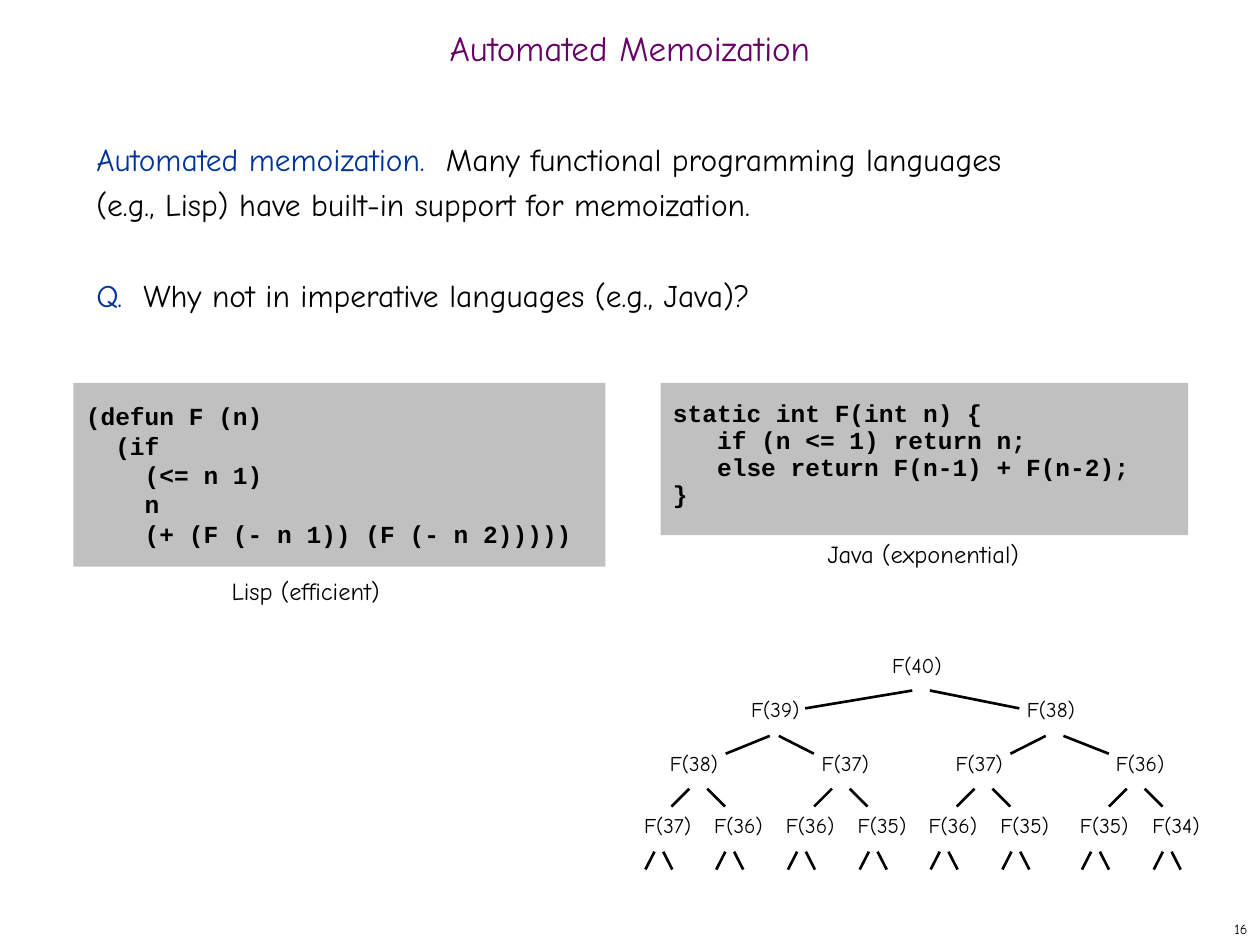
"""Build the Automated Memoization slide with two code boxes and a call tree."""
from lxml.etree import SubElement
from pptx import Presentation
from pptx.dml.color import RGBColor
from pptx.enum.shapes import MSO_CONNECTOR as CONN, MSO_SHAPE as SHAPE
from pptx.enum.text import MSO_ANCHOR as ANCHOR, PP_ALIGN as ALIGN
from pptx.oxml.ns import qn
from pptx.util import Pt

COLORS = {"title": "660066", "accent": "003399", "text": "000000",
          "tree": "010000", "code": "C0C0C0"}
SANS, MONO = "Comic Neue", "Courier New"

TITLE = "Automated Memoization"
BODY = [
    [("Automated memoization.  ", "accent"),
     ("Many functional programming languages\v"
      "(e.g., Lisp) have built-in support for memoization.", "text")],
    [("Q.", "accent"),
     ("  Why not in imperative languages (e.g., Java)?", "text")],
]
JAVA = ["static int F(int n) {",
        "   if (n <= 1) return n;",
        "   else return F(n-1) + F(n-2);",
        "}"]
LISP = ["(defun F (n)",
        "  (if",
        "    (<= n 1)",
        "    n",
        "    (+ (F (- n 1)) (F (- n 2)))))"]
CAPTIONS = [("Lisp (efficient)", (125.3, 325.4, 113, 26.6)),
            ("Java (exponential)", (465.8, 304.6, 134, 26.6))]

LABEL_W, LABEL_H, EDGE_H = 46, 24.5, 10.2


def fan(apex, gap, reach):
    """Return start and end x of the left and right edge under an apex."""
    return apex - gap, apex - reach, apex + gap, apex + reach


QUARTERS = [("F(38)", 373.5, 399), ("F(37)", 460, 480.5),
            ("F(37)", 536.5, 562), ("F(36)", 628.5, 649)]
LEAVES = [("F(37)", 358.5), ("F(36)", 399), ("F(36)", 440), ("F(35)", 481),
          ("F(36)", 521.5), ("F(35)", 562.5), ("F(35)", 608), ("F(34)", 649)]
LEVELS = [
    (369.4, 394.6, [("F(40)", 501, (521.3, 460.1, 531.4, 582.5))]),
    (394.6, 420.5, [("F(39)", 420, (439.9, 414.7, 445, 465.1)),
                    ("F(38)", 577.5, (597.6, 577.4, 607.7, 633.6))]),
    (425.5, 450.7, [(t, x, fan(a, 5.1, 15.3)) for t, x, a in QUARTERS]),
    (460.8, 486.7, [(t, x, fan(x + 18, 2.5, 7.7)) for t, x in LEAVES]),
]


def rgb(name):
    return RGBColor.from_string(COLORS[name])


def put_text(s, paragraphs, box=None, size=14, font=SANS, color="text", bold=False,
             align=ALIGN.LEFT, anchor=ANCHOR.TOP, wrap=True, spacing=None,
             before=0, inset=3.6, fill=None):
    """Add a box holding paragraphs, each a string or a list of colored runs."""
    x, y, w, h = map(Pt, box)
    if fill:
        sp = s.shapes.add_shape(SHAPE.RECTANGLE, x, y, w, h)
        sp.shadow.inherit = False
        sp.fill.solid()
        sp.fill.fore_color.rgb = rgb(fill)
        sp.line.fill.background()
    else:
        sp = s.shapes.add_textbox(x, y, w, h)
    tf = sp.text_frame
    tf.word_wrap, tf.vertical_anchor = wrap, anchor
    tf.margin_left = tf.margin_right = Pt(7.2)
    tf.margin_top = tf.margin_bottom = Pt(inset)
    for i, runs in enumerate(paragraphs):
        p = tf.add_paragraph() if i else tf.paragraphs[0]
        p.alignment = align
        p.line_spacing = spacing
        p.space_before = Pt(before if i else 0)
        for text, name in [(runs, color)] if isinstance(runs, str) else runs:
            for j, part in enumerate(text.split("\v")):
                if j:
                    p.add_line_break()
                r = p.add_run()
                r.text = part
                r.font.name, r.font.size, r.font.bold = font, Pt(size), bold
                r.font.color.rgb = rgb(name)


def put_line(s, x1, y1, x2, y2):
    """Add one tree edge."""
    c = s.shapes.add_connector(CONN.STRAIGHT, Pt(x1), Pt(y1), Pt(x2), Pt(y2))
    c.line.color.rgb = rgb("tree")
    c.line.width = Pt(1.5)
    SubElement(c._element.spPr, qn("a:effectLst"))


def main():
    """Build and save the slide."""
    prs = Presentation()
    prs.slide_width, prs.slide_height = Pt(720), Pt(540)
    s = prs.slides.add_slide(prs.slide_layouts[6])

    put_text(s, ["16"], box=(570, 522, 150, 18), size=8,
             align=ALIGN.RIGHT, anchor=ANCHOR.MIDDLE)
    put_text(s, [TITLE], box=(0, 12, 720, 36), size=20, color="title",
             align=ALIGN.CENTER, anchor=ANCHOR.MIDDLE, spacing=0.7)
    put_text(s, BODY, box=(48, 72, 618, 426), size=18, spacing=Pt(26), before=26)

    for top, edge_top, nodes in LEVELS:
        for label, left, (left_1, left_2, right_1, right_2) in nodes:
            put_text(s, [label], box=(left, top, LABEL_W, LABEL_H), size=12,
                     color="tree", align=ALIGN.CENTER)
            ends = (left_1, left_2), (right_1, right_2)
            for x1, x2 in ends:
                put_line(s, x1, edge_top, x2, edge_top + EDGE_H)

    code = dict(font=MONO, bold=True, fill="code", anchor=ANCHOR.MIDDLE)
    put_text(s, JAVA, box=(377.5, 218.8, 301.5, 87), spacing=0.5, before=7,
             inset=14.4, **code)
    put_text(s, LISP, box=(42, 218.8, 304, 105), inset=10.8, **code)
    for caption, box in CAPTIONS:
        put_text(s, [caption], box=box, wrap=False)

    prs.save("out.pptx")


if __name__ == "__main__":
    main()
